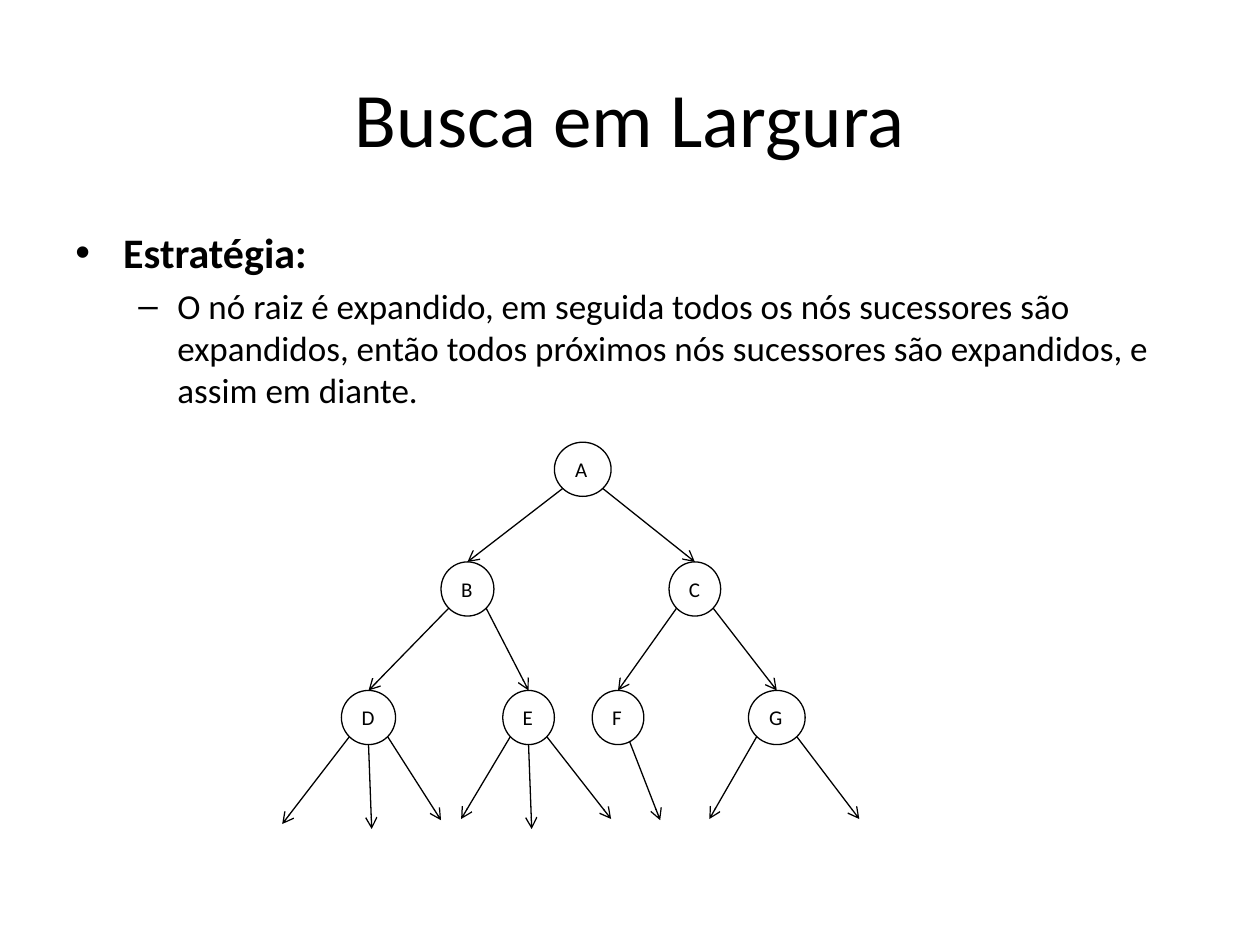
"""Build the breadth-first search slide with its strategy text and search tree."""
from dataclasses import dataclass
from math import sqrt

from lxml.etree import SubElement
from pptx import Presentation
from pptx.dml.color import RGBColor
from pptx.enum.shapes import MSO_CONNECTOR as Connector, MSO_SHAPE as Shape
from pptx.enum.text import MSO_ANCHOR as Anchor, PP_ALIGN as Align
from pptx.oxml.ns import qn
from pptx.util import Inches, Pt


@dataclass(frozen=True)
class Theme:
    ink: RGBColor = RGBColor(0, 0, 0)
    font: str = "Calibri"
    title: int = 44
    heading: int = 24
    body: int = 20
    node: int = 12
    line: float = 0.75


theme = Theme()


def style(paragraph, size, bold=False):
    for run in paragraph.runs:
        run.font.name = theme.font
        run.font.size = Pt(size)
        run.font.bold = bold
        run.font.color.rgb = theme.ink


def add_arrow(start, end):
    arrow = slide.shapes.add_connector(
        Connector.STRAIGHT, *(Inches(value) for value in (*start, *end)))
    arrow.line.color.rgb = theme.ink
    arrow.line.width = Pt(theme.line)
    SubElement(arrow.line._get_or_add_ln(), qn("a:tailEnd"), type="arrow")
    SubElement(arrow._element.spPr, qn("a:effectLst"))
    return arrow


prs = Presentation()
prs.slide_width, prs.slide_height = Inches(10), Inches(7.5)
slide = prs.slides.add_slide(prs.slide_layouts[5])

title = slide.shapes.title
title.left, title.top = Inches(0.5), Inches(0.3)
title.width, title.height = Inches(9), Inches(1.25)
title.text_frame.text = "Busca em Largura"
title.text_frame.vertical_anchor = Anchor.MIDDLE
title.text_frame.paragraphs[0].alignment = Align.CENTER
style(title.text_frame.paragraphs[0], theme.title)

strategy = slide.shapes.add_textbox(Inches(0.5), Inches(1.75), Inches(9), Inches(4.95)).text_frame
strategy.word_wrap = True
strategy.text = (
    "Estratégia:\n"
    "O nó raiz é expandido, em seguida todos os nós sucessores são expandidos, "
    "então todos próximos nós sucessores são expandidos, e assim em diante."
)
bullets = [("•", 0.38, 0.38, theme.heading, True), ("–", 0.81, 0.31, theme.body, False)]
for level, (paragraph, bullet) in enumerate(zip(strategy.paragraphs, bullets)):
    mark, margin, hanging, size, bold = bullet
    paragraph.level = level
    properties = paragraph._p.get_or_add_pPr()
    properties.set("marL", str(Inches(margin)))
    properties.set("indent", str(-Inches(hanging)))
    SubElement(properties, qn("a:buFont"), typeface="Arial")
    SubElement(properties, qn("a:buChar"), char=mark)
    style(paragraph, size, bold)
strategy.paragraphs[1].space_before = Pt(0.2 * theme.body)

node_height = 0.43
level_tops = [3.51, 4.46, 5.48]
tree = {
    "A": (0, 4.4, 0.45), "B": (1, 3.5, 0.42), "C": (1, 5.31, 0.41),
    "D": (2, 2.71, 0.43), "E": (2, 3.99, 0.41), "F": (2, 4.7, 0.41), "G": (2, 5.94, 0.45),
}
nodes = {}
for label, (level, left, width) in tree.items():
    node = slide.shapes.add_shape(
        Shape.OVAL, Inches(left), Inches(level_tops[level]), Inches(width), Inches(node_height))
    node.shadow.inherit = False
    node.fill.background()
    node.line.color.rgb = theme.ink
    node.line.width = Pt(theme.line)
    node.text_frame.text = label
    node.text_frame.word_wrap = False
    node.text_frame.vertical_anchor = Anchor.MIDDLE
    node.text_frame.paragraphs[0].alignment = Align.LEFT
    style(node.text_frame.paragraphs[0], theme.node)
    nodes[label] = node

diagonal = sqrt(0.5)
children = {"A": "BC", "B": "DE", "C": "FG"}
open_ends = {
    "D": [(-diagonal, 2.24, 6.54), (0, 2.95, 6.58), (diagonal, 3.5, 6.51)],
    "E": [(-diagonal, 3.66, 6.5), (0, 4.22, 6.58), (diagonal, 4.85, 6.5)],
    "F": [(0.45, 5.24, 6.51)],
    "G": [(-diagonal, 5.63, 6.5), (diagonal, 6.82, 6.5)],
}
branches = [
    (parent, side, tree[child][1] + tree[child][2] / 2, level_tops[tree[child][0]], child)
    for parent, pair in children.items()
    for side, child in zip((-diagonal, diagonal), pair)
]
branches += [(parent, *end, None) for parent, ends in open_ends.items() for end in ends]
for parent, side, end_x, end_y, child in branches:
    level, left, width = tree[parent]
    start_x = left + width / 2 * (1 + side)
    start_y = level_tops[level] + node_height / 2 * (1 + sqrt(1 - side ** 2))
    arrow = add_arrow((start_x, start_y), (end_x, end_y))
    if child:
        arrow.end_connect(nodes[child], 0)

prs.save("out.pptx")
